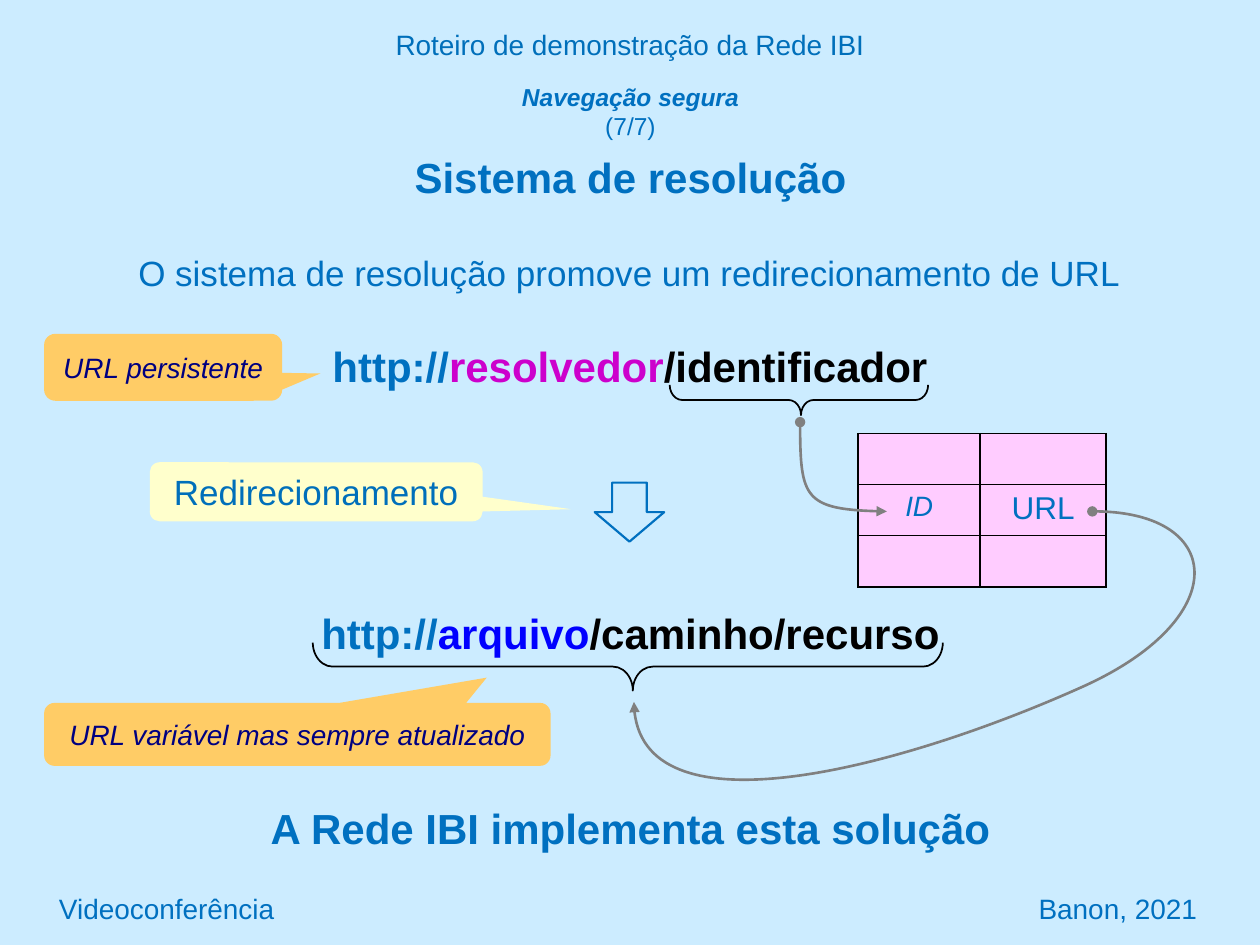
from pptx import Presentation
from pptx.dml.color import RGBColor as RGB
from pptx.enum.shapes import MSO_SHAPE as Kind
from pptx.enum.text import MSO_ANCHOR as Anchor, PP_ALIGN as Align
from pptx.oxml.ns import qn
from pptx.util import Cm, Pt
from lxml.etree import SubElement as Sub


class Theme:
    font = "Arial"
    sky = RGB.from_string("CCECFF")
    blue = RGB.from_string("0070C0")
    steel = RGB.from_string("006FBA")
    navy = RGB.from_string("000080")
    host = RGB.from_string("0000FF")
    plum = RGB.from_string("CC00CC")
    black = RGB.from_string("000000")
    gray = RGB.from_string("808080")
    amber = RGB.from_string("FFCC66")
    cream = RGB.from_string("FFFFCC")
    pink = RGB.from_string("FFCCFF")
    tiny, small, cell, mid, big = Pt(14), Pt(16), Pt(18), Pt(20), Pt(24)


def write(para, parts, size, color=None, bold=False, italic=False, align=Align.CENTER):
    para.alignment = align
    font = para.font
    font.name, font.size, font.bold, font.italic = Theme.font, size, bold, italic
    if color is not None:
        font.color.rgb = color
    for words, tint in parts:
        run = para.add_run()
        run.text = words
        if tint is not None:
            run.font.color.rgb = tint


deck = Presentation()
deck.slide_width, deck.slide_height = Cm(25.4), Cm(19.05)
slide = deck.slides.add_slide(deck.slide_layouts[5])
slide.background.fill.solid()
slide.background.fill.fore_color.rgb = Theme.sky
shapes = slide.shapes

title = shapes.title
title.left, title.top, title.width, title.height = Cm(1.9), Cm(1.52), Cm(21.62), Cm(2.49)
frame = title.text_frame
frame.vertical_anchor = Anchor.TOP
head = frame.paragraphs[0]
write(head, [("Navegação segura", None)], Theme.tiny, Theme.blue)
head.runs[0].font.bold = head.runs[0].font.italic = True
head.add_line_break()
head.add_run().text = "(7/7)"
topic = frame.add_paragraph()
topic.space_before = Pt(6)
write(topic, [("Sistema de resolução", None)], Theme.big, Theme.blue, bold=True)

texts = [
    (0, 0.43, 25.4, 0.94, [("Roteiro de demonstração da Rede IBI", Theme.steel)],
     Theme.small, False, Align.CENTER),
    (0.94, 17.78, 8, 1.07, [("Videoconferência", Theme.blue)],
     Theme.small, False, Align.LEFT),
    (16.38, 17.78, 8, 1.07, [("Banon, 2021", Theme.blue)],
     Theme.small, False, Align.RIGHT),
    (2.34, 4.93, 20.7, 1.12,
     [("O sistema de resolução promove um redirecionamento de URL", Theme.blue)],
     Theme.mid, False, Align.CENTER),
    (5.33, 12.12, 14.76, 1.27,
     [("http://", Theme.blue), ("arquivo", Theme.host), ("/caminho/recurso", Theme.black)],
     Theme.big, True, Align.CENTER),
    (6.35, 6.73, 12.7, 1.27,
     [("http://", Theme.blue), ("resolvedor", Theme.plum), ("/identificador", Theme.black)],
     Theme.big, True, Align.CENTER),
    (5.13, 16.05, 15.16, 1.27, [("A Rede IBI implementa esta solução", Theme.blue)],
     Theme.big, True, Align.CENTER),
]
for x, y, w, h, parts, size, bold, align in texts:
    frame = shapes.add_textbox(Cm(x), Cm(y), Cm(w), Cm(h)).text_frame
    frame.word_wrap = True
    frame.vertical_anchor = Anchor.MIDDLE
    write(frame.paragraphs[0], parts, size, bold=bold, align=align)

notes = [
    (0.89, 6.73, 4.8, 1.35, (0.66, 0.093, 0.167), Theme.amber,
     "URL persistente", Theme.small, Theme.navy, True),
    (0.89, 14.17, 10.21, 1.27, (0.374, -0.901, 0.167), Theme.amber,
     "URL variável mas sempre atualizado", Theme.small, Theme.navy, True),
    (3.02, 9.32, 6.71, 1.19, (0.766, 0.295, 0.167), Theme.cream,
     "Redirecionamento", Theme.mid, Theme.steel, False),
]
for x, y, w, h, tip, fill, words, size, color, italic in notes:
    note = shapes.add_shape(Kind.ROUNDED_RECTANGULAR_CALLOUT, Cm(x), Cm(y), Cm(w), Cm(h))
    note.shadow.inherit = False
    for i, value in enumerate(tip):
        note.adjustments[i] = value
    note.fill.solid()
    note.fill.fore_color.rgb = fill
    note.line.fill.background()
    note.text_frame.vertical_anchor = Anchor.MIDDLE
    write(note.text_frame.paragraphs[0], [(words, None)], size, color, italic=italic)

arrow = shapes.add_shape(Kind.DOWN_ARROW, Cm(11.99), Cm(9.73), Cm(1.4), Cm(1.19))
arrow.shadow.inherit = False
arrow.fill.background()
arrow.line.color.rgb = Theme.blue
arrow.line.width = Pt(1.25)

table = shapes.add_table(3, 2, Cm(17.3), Cm(8.74), Cm(5), Cm(3.09)).table
table.first_row = table.horz_banding = False
table.columns[0].width, table.columns[1].width = Cm(2.46), Cm(2.54)
for row in table.rows:
    row.height = Cm(1.03)
for cell in table.iter_cells():
    props = cell._tc.get_or_add_tcPr()
    for side in ("a:lnL", "a:lnR", "a:lnT", "a:lnB"):
        edge = Sub(props, qn(side), w=str(Pt(1)))
        Sub(Sub(edge, qn("a:solidFill")), qn("a:srgbClr"), val=str(Theme.black))
    cell.fill.solid()
    cell.fill.fore_color.rgb = Theme.pink
for col, words, size, italic in ((0, "ID", Theme.small, True), (1, "URL", Theme.cell, False)):
    para = table.cell(1, col).text_frame.paragraphs[0]
    write(para, [(words, None)], size, Theme.blue, italic=italic)

curves = [
    ((16.13, 8.51, 1.75, 1.8),
     [(16.13, 8.51), (16.13, 10.01), (16.23, 10.29), (17.88, 10.31)]),
    ((12.78, 10.31, 11.28, 5.41),
     [(22.02, 10.31), (24.71, 10.29), (24.87, 12.5), (21.77, 13.87),
      (18.26, 15.44), (12.8, 16.94), (12.78, 14.15)]),
]
for (x, y, w, h), points in curves:
    pen = shapes.build_freeform(Cm(x), Cm(y))
    pen.add_line_segments([(Cm(x + w), Cm(y + h))], close=False)
    curve = pen.convert_to_shape()
    curve.shadow.inherit = False
    curve.fill.background()
    curve.line.color.rgb = Theme.gray
    curve.line.width = Pt(1.5)
    props = curve._element.spPr
    track = next(props.iter(qn("a:path")))
    for step in list(track):
        track.remove(step)
    for i, (px, py) in enumerate(points):
        if i == 0:
            step = Sub(track, qn("a:moveTo"))
        elif i % 3 == 1:
            step = Sub(track, qn("a:cubicBezTo"))
        Sub(step, qn("a:pt"), x=str(Cm(px - x)), y=str(Cm(py - y)))
    line = props.find(qn("a:ln"))
    Sub(line, qn("a:headEnd"), type="oval")
    Sub(line, qn("a:tailEnd"), type="triangle")

for x, y, w, h in ((12.17, 7.09, 0.97, 12.7), (15.8, 5.46, 0.61, 5.21)):
    brace = shapes.add_shape(Kind.LEFT_BRACE, Cm(x), Cm(y), Cm(w), Cm(h))
    brace.shadow.inherit = False
    brace.rotation = 270
    brace._element.spPr.find(qn("a:xfrm")).set("flipV", "1")
    brace.adjustments[0], brace.adjustments[1] = 0.412, 0.492
    brace.fill.background()
    brace.line.color.rgb = Theme.black
    brace.line.width = Pt(1)

deck.save("out.pptx")
